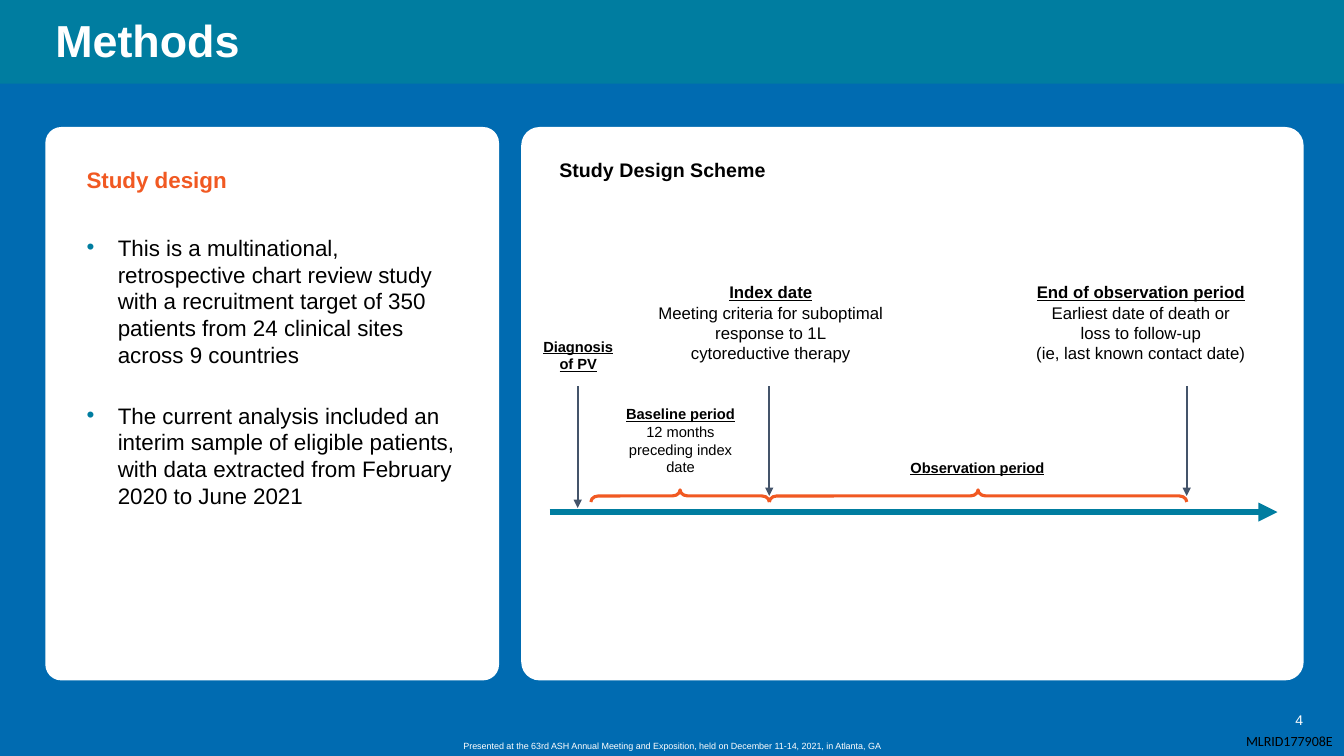
from lxml import etree
from pptx import Presentation
from pptx.dml.color import RGBColor
from pptx.enum.shapes import MSO_CONNECTOR as Connector, MSO_SHAPE as Shape
from pptx.enum.text import MSO_ANCHOR as Anchor, PP_ALIGN as Align
from pptx.oxml.ns import qn
from pptx.util import Inches, Pt

BLUE, TEAL, ORANGE = "006BB1", "007DA0", "F15922"
WHITE, BLACK, SLATE = "FFFFFF", "000000", "44546A"

# Timeline positions in inches
DIAGNOSIS_X, BASELINE_X, INDEX_X, END_X = 5.73, 5.86, 7.63, 11.77
AXIS_Y, BRACE_Y, ARROW_TOP, ARROW_BOTTOM = 5.08, 4.92, 3.83, 4.92


def color(value):
    return RGBColor.from_string(value)


def add_block(slide, kind, left, top, width, height, fill, corner=None):
    block = slide.shapes.add_shape(
        kind, Inches(left), Inches(top), Inches(width), Inches(height))
    block.shadow.inherit = False
    block.fill.solid()
    block.fill.fore_color.rgb = color(fill)
    block.line.fill.background()
    if corner is not None:
        block.adjustments[0] = corner


def add_box(slide, left, top, width, height, anchor=Anchor.TOP, wrap=True):
    box = slide.shapes.add_textbox(
        Inches(left), Inches(top), Inches(width), Inches(height))
    frame = box.text_frame
    frame.word_wrap = wrap
    frame.vertical_anchor = anchor
    return frame


def add_para(frame, index, align=Align.LEFT):
    para = frame.add_paragraph() if index else frame.paragraphs[0]
    para.alignment = align
    return para


def add_text(para, text, size, fill=BLACK, bold=False, underline=False, face="Arial"):
    """Add one run per line, with line breaks between them."""
    for index, line in enumerate(text.split("\n")):
        if index:
            para.add_line_break()
        span = para.add_run()
        span.text = line
        font = span.font
        font.name, font.size = face, Pt(size)
        font.bold, font.underline = bold, underline
        font.color.rgb = color(fill)
    return span


def add_bullet(para):
    props = para._p.get_or_add_pPr()
    props.set("marL", str(Inches(0.31)))
    props.set("indent", str(-Inches(0.31)))
    bullet_color = etree.SubElement(props, qn("a:buClr"))
    etree.SubElement(bullet_color, qn("a:srgbClr"), val=TEAL)
    etree.SubElement(props, qn("a:buFont"), typeface="Arial")
    etree.SubElement(props, qn("a:buChar"), char="•")


def add_arrow(slide, x1, y1, x2, y2, fill, weight):
    arrow = slide.shapes.add_connector(
        Connector.STRAIGHT, Inches(x1), Inches(y1), Inches(x2), Inches(y2))
    arrow.line.color.rgb = color(fill)
    arrow.line.width = Pt(weight)
    etree.SubElement(arrow.line._get_or_add_ln(), qn("a:tailEnd"), type="triangle")
    etree.SubElement(arrow._element.spPr, qn("a:effectLst"))


def add_brace(slide, start, end):
    """Place an upward brace over the span from start to end."""
    thickness, length = 0.12, end - start
    brace = slide.shapes.add_shape(
        Shape.LEFT_BRACE,
        Inches((start + end - thickness) / 2), Inches(BRACE_Y - length / 2),
        Inches(thickness), Inches(length))
    brace.rotation = 90
    brace.adjustments[0] = 0.628
    brace.shadow.inherit = False
    brace.fill.background()
    brace.line.color.rgb = color(ORANGE)
    brace.line.width = Pt(2.25)


def add_label(slide, left, top, width, height, size, heading, *details):
    frame = add_box(slide, left, top, width, height)
    add_text(add_para(frame, 0, Align.CENTER), heading, size, bold=True, underline=True)
    for index, detail in enumerate(details, 1):
        add_text(add_para(frame, index, Align.CENTER), detail, size)


def add_background(slide):
    slide.background.fill.solid()
    slide.background.fill.fore_color.rgb = color(BLUE)
    add_block(slide, Shape.ROUNDED_RECTANGLE, 0.45, 1.26, 4.5, 5.49, WHITE, 0.035)
    add_block(slide, Shape.ROUNDED_RECTANGLE, 5.17, 1.26, 7.76, 5.49, WHITE, 0.033)
    add_block(slide, Shape.RECTANGLE, 0, -0.03, 13.33, 0.86, TEAL)


def add_study_design(slide):
    frame = add_box(slide, 0.76, 1.56, 3.89, 0.44, Anchor.MIDDLE)
    add_text(add_para(frame, 0), "Study design", 16, ORANGE, bold=True)
    points = (
        "This is a multinational, retrospective chart review study with a "
        "recruitment target of 350 patients from 24 clinical sites across 9 countries",
        "The current analysis included an interim sample of eligible patients, "
        "with data extracted from February 2020 to June 2021",
    )
    frame = add_box(slide, 0.76, 2.27, 3.89, 4.15)
    for index, point in enumerate(points):
        para = add_para(frame, index)
        add_bullet(para)
        para.space_before = Pt(12 if index else 0)
        para.space_after = Pt(12)
        add_text(para, point, 16)


def add_timeline(slide):
    frame = add_box(slide, 5.45, 1.52, 7.46, 0.34)
    add_text(add_para(frame, 0), "Study Design Scheme", 14, bold=True)

    # Axis, event arrows and period braces
    add_arrow(slide, 5.45, AXIS_Y, 12.67, AXIS_Y, TEAL, 4.5)
    for x, bottom in ((DIAGNOSIS_X, 5.04), (INDEX_X, ARROW_BOTTOM), (END_X, ARROW_BOTTOM)):
        add_arrow(slide, x, ARROW_TOP, x, bottom, SLATE, 1.5)
    add_brace(slide, BASELINE_X, INDEX_X)
    add_brace(slide, INDEX_X, END_X)

    # Event and period labels
    add_label(slide, 5.28, 3.3, 0.91, 0.47, 10.5, "Diagnosis of PV")
    add_label(slide, 6, 3.97, 1.5, 0.81, 10.5, "Baseline period",
              "12 months\npreceding index\ndate")
    add_label(slide, 8.57, 4.5, 2.25, 0.28, 10.5, "Observation period")
    add_label(slide, 6.17, 2.75, 2.95, 0.91, 12, "Index date",
              "Meeting criteria for suboptimal response to 1L\ncytoreductive therapy")
    add_label(slide, 9.84, 2.75, 2.95, 0.91, 12, "End of observation period",
              "Earliest date of death or\nloss to follow-up",
              "(ie, last known contact date)")


def add_footer(slide):
    frame = add_box(slide, 3.78, 7.28, 5.77, 0.22)
    span = add_text(
        add_para(frame, 0, Align.CENTER),
        "Presented at the 63rd ASH Annual Meeting and Exposition, "
        "held on December 11-14, 2021, in Atlanta, GA", 11, WHITE)
    span._r.get_or_add_rPr().set("baseline", "30000")
    frame = add_box(slide, 12.62, 6.94, 0.53, 0.41, Anchor.MIDDLE)
    add_text(add_para(frame, 0, Align.CENTER), "4", 10, WHITE)
    frame = add_box(slide, 12.26, 7.22, 1.08, 0.27, wrap=False)
    add_text(add_para(frame, 0), "MLRID177908E", 10, face="Calibri")


def main():
    deck = Presentation()
    deck.slide_width, deck.slide_height = Inches(13.33), Inches(7.5)
    slide = deck.slides.add_slide(deck.slide_layouts[6])
    add_background(slide)

    # Title
    frame = add_box(slide, 0.45, 0.03, 11.91, 0.79, Anchor.MIDDLE)
    para = add_para(frame, 0)
    para.line_spacing = 0.9
    add_text(para, "Methods", 32, WHITE, bold=True)

    add_study_design(slide)
    add_timeline(slide)
    add_footer(slide)
    deck.save("out.pptx")


if __name__ == "__main__":
    main()
